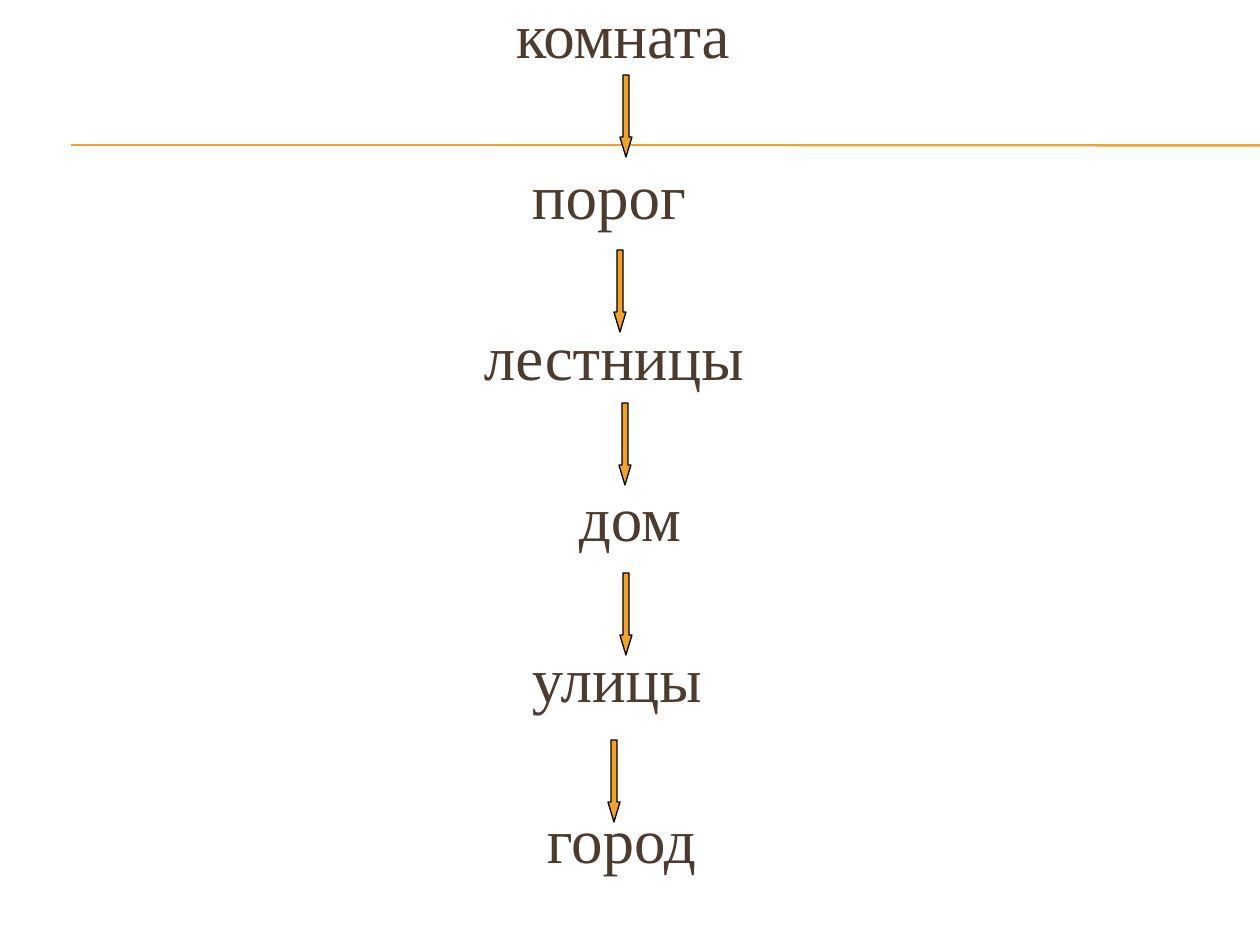
from lxml import etree
from pptx import Presentation
from pptx.dml.color import RGBColor
from pptx.enum.shapes import MSO_CONNECTOR, MSO_SHAPE
from pptx.enum.text import MSO_ANCHOR, PP_ALIGN
from pptx.oxml.ns import qn
from pptx.util import Emu, Pt

STRAIGHT = MSO_CONNECTOR.STRAIGHT
DOWN_ARROW = MSO_SHAPE.DOWN_ARROW
TOP = MSO_ANCHOR.TOP
LEFT = PP_ALIGN.LEFT
ORANGE = RGBColor(0xF0, 0xA2, 0x2E)
BROWN = RGBColor(0x4E, 0x3B, 0x30)
BLACK = RGBColor(0, 0, 0)
FONT = "Times New Roman"
WIDTH, HEIGHT = 1260, 945
WORDS = [
    ("комната", 516),
    ("порог", 532),
    ("лестницы", 484),
    ("дом", 579),
    ("улицы", 532),
    ("город", 547),
]
ARROWS = [(620, 75), (614, 250), (619, 403), (620, 573), (608, 740)]


def px(count):
    return Emu(count * 914400 // 126)


deck = Presentation()
deck.slide_width, deck.slide_height = px(WIDTH), px(HEIGHT)
page = deck.slides.add_slide(deck.slide_layouts[6])

for start_y, end_y in ((145, 145), (145, 146)):
    rule = page.shapes.add_connector(STRAIGHT, px(71), px(start_y), px(WIDTH), px(end_y))
    rule.line.color.rgb = ORANGE
    rule.line.width = Pt(0.75)
    etree.SubElement(rule._element.spPr, qn("a:effectLst"))

box = page.shapes.add_textbox(0, 0, px(WIDTH), px(873))
frame = box.text_frame
frame.word_wrap = True
frame.vertical_anchor = TOP
frame.margin_left = frame.margin_right = frame.margin_bottom = 0
frame.margin_top = px(4)
frame.text = "\n".join(word for word, indent in WORDS)
for para, (word, indent) in zip(frame.paragraphs, WORDS):
    para.alignment = LEFT
    para.line_spacing = 0.9
    para.space_after = px(93)
    para._p.get_or_add_pPr().set("marL", str(px(indent)))
    span = para.runs[0]
    span.font.name = FONT
    span.font.size = Pt(36)
    span.font.color.rgb = BROWN

for left, top in ARROWS:
    arrow = page.shapes.add_shape(DOWN_ARROW, px(left), px(top), px(12), px(82))
    arrow.adjustments[0] = 0.5
    arrow.adjustments[1] = 1.66
    arrow.shadow.inherit = False
    arrow.fill.solid()
    arrow.fill.fore_color.rgb = ORANGE
    arrow.line.color.rgb = BLACK
    arrow.line.width = Pt(0.75)

deck.save("out.pptx")
